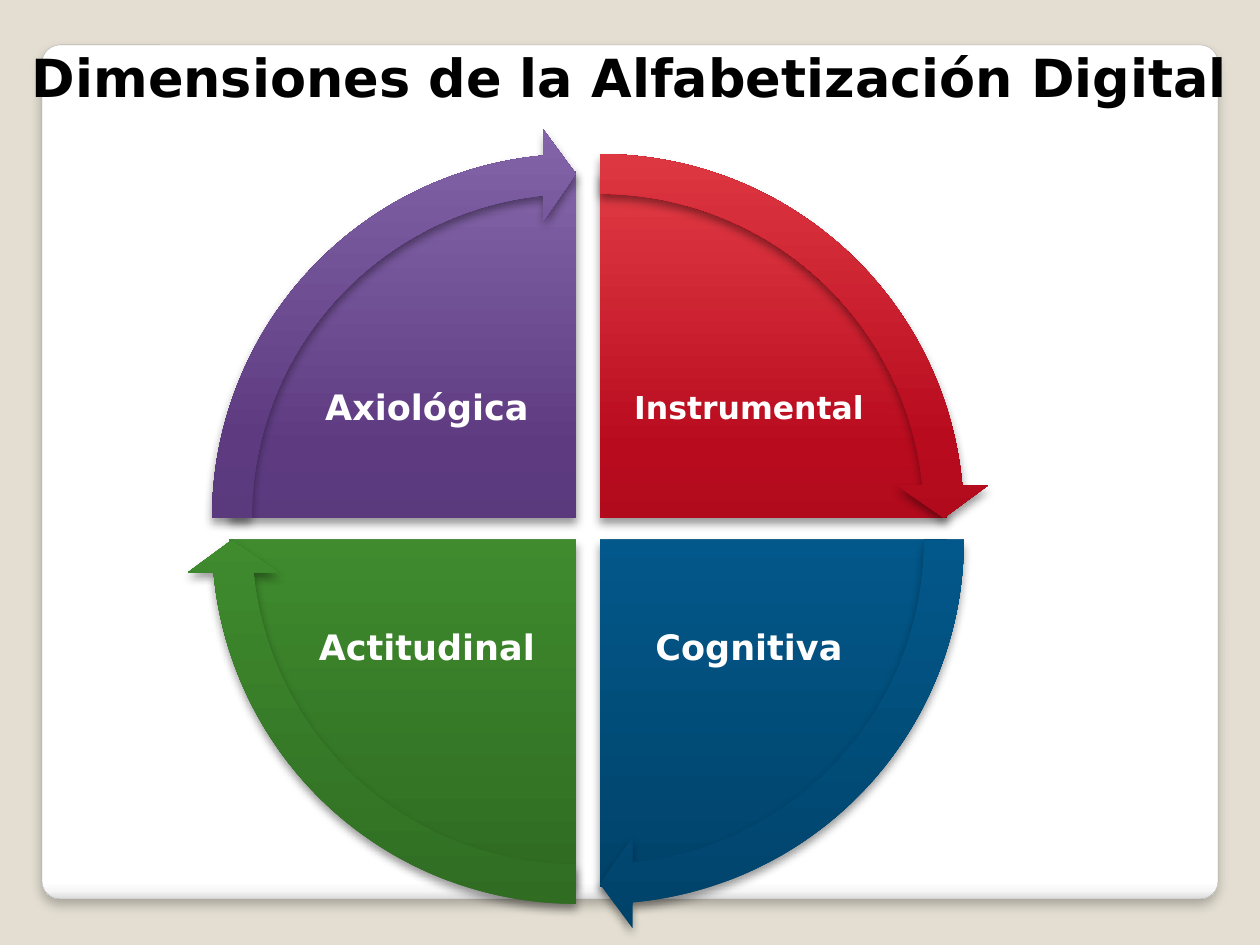
from pptx import Presentation
from pptx.dml.color import RGBColor
from pptx.enum.shapes import MSO_SHAPE
from pptx.enum.text import MSO_ANCHOR, PP_ALIGN
from pptx.oxml import parse_xml
from pptx.oxml.ns import nsdecls, qn
from pptx.util import Emu, Pt

SCALE = 914400 / 126
TURN = 54
HEAD = 3.275


def px(n):
    return Emu(round(n * SCALE))


def color(code):
    return RGBColor.from_string(code)


def assign(target, values):
    for name, value in values.items():
        setattr(target, name, value)


class Deck:
    font = {"name": "DejaVu Sans", "bold": True}
    frame = {"word_wrap": True}
    label = {"vertical_anchor": MSO_ANCHOR.MIDDLE, "margin_left": px(4),
             "margin_right": px(4), "margin_top": px(4), "margin_bottom": px(4)}
    shade = (40, 5.2, 3)

    def __init__(self, wide, high, back):
        self.show = Presentation()
        self.show.slide_width, self.show.slide_height = px(wide), px(high)
        self.slide = self.show.slides.add_slide(self.show.slide_layouts[6])
        fill = self.slide.background.fill
        fill.solid()
        fill.fore_color.rgb = color(back)

    def shape(self, kind, box, adjust, stops, angle=270, shade=shade):
        item = self.slide.shapes.add_shape(kind, *map(px, box))
        for i, value in enumerate(adjust):
            item.adjustments[i] = value
        item.line.fill.background()
        self.blend(item, stops, angle)
        self.shadow(item, *shade)
        return item

    def blend(self, item, stops, angle):
        item.fill.background()
        marks = "".join(
            f'<a:gs pos="{spot * 1000}"><a:srgbClr val="{code}"/></a:gs>'
            for spot, code in stops)
        grad = parse_xml(
            f'<a:gradFill {nsdecls("a")} rotWithShape="1"><a:gsLst>{marks}</a:gsLst>'
            f'<a:lin ang="{angle * 60000}" scaled="0"/></a:gradFill>')
        props = item._element.spPr
        props.replace(props.find(qn("a:noFill")), grad)

    def shadow(self, item, alpha, blur, gap):
        item.shadow.inherit = False
        item._element.spPr.find(qn("a:effectLst")).append(parse_xml(
            f'<a:outerShdw {nsdecls("a")} blurRad="{Pt(blur)}" dist="{Pt(gap)}" '
            f'dir="5400000" rotWithShape="0"><a:srgbClr val="000000">'
            f'<a:alpha val="{alpha * 1000}"/></a:srgbClr></a:outerShdw>'))

    def text(self, words, box, size, ink, frame={}, line=1.0):
        area = self.slide.shapes.add_textbox(*map(px, box)).text_frame
        assign(area, {**self.frame, **frame})
        para = area.paragraphs[0]
        assign(para, {"alignment": PP_ALIGN.CENTER, "line_spacing": line})
        run = para.add_run()
        run.text = words
        assign(run.font, {**self.font, "size": Pt(size)})
        run.font.color.rgb = color(ink)

    def round(self, kind, mid, side, adjust, stops):
        x, y = mid
        self.shape(kind, (x - side // 2, y - side // 2, side, side), adjust, stops)

    def save(self):
        self.show.save("out.pptx")


def main():
    deck = Deck(1260, 945, "E3DED1")
    card = deck.shape(
        MSO_SHAPE.ROUNDED_RECTANGLE, (42, 45, 1176, 854), [0.021],
        [(0, "FFFFFF"), (98, "FFFFFF"), (99, "F7F7F7"), (100, "DADADA")],
        90, (25, 6, 4))
    card.line.color.rgb = color("A4A4A4")
    card.line.width = Pt(0.16)
    deck.text("Dimensiones de la Alfabetización Digital",
              (0, 39, 1260, 158), 30, "000000")

    left, right, top, low = (576, 299), (600, 621), (518, 314), (540, 554)
    parts = [
        ("Instrumental", 18, right, top, 162, ("870614", "B80B1E", "E13C45")),
        ("Cognitiva", 20, right, low, 0, ("00436A", "035C91", "4A80B7")),
        ("Actitudinal", 20, left, low, 54, ("2F6B22", "429230", "66B959")),
        ("Axiológica", 20, left, top, 108, ("442A5E", "5E3B81", "8364A8")),
    ]
    spots = (0, 60, 100)
    for name, size, (x, tx), (y, ty), start, tones in parts:
        deck.round(MSO_SHAPE.PIE, (x, y), 694,
                   [start, (start + TURN) % 216], list(zip(spots, tones)))
        deck.text(name, (tx, ty, 256, 190), size, "FFFFFF", deck.label, 0.9)
    for _, _, (x, _), (y, _), start, tones in parts:
        deck.round(MSO_SHAPE.CIRCULAR_ARROW, (x, y), 780,
                   [0.051, HEAD, start + TURN - HEAD, start, 0.059],
                   list(zip(spots, tones)))
    deck.save()


if __name__ == "__main__":
    main()
